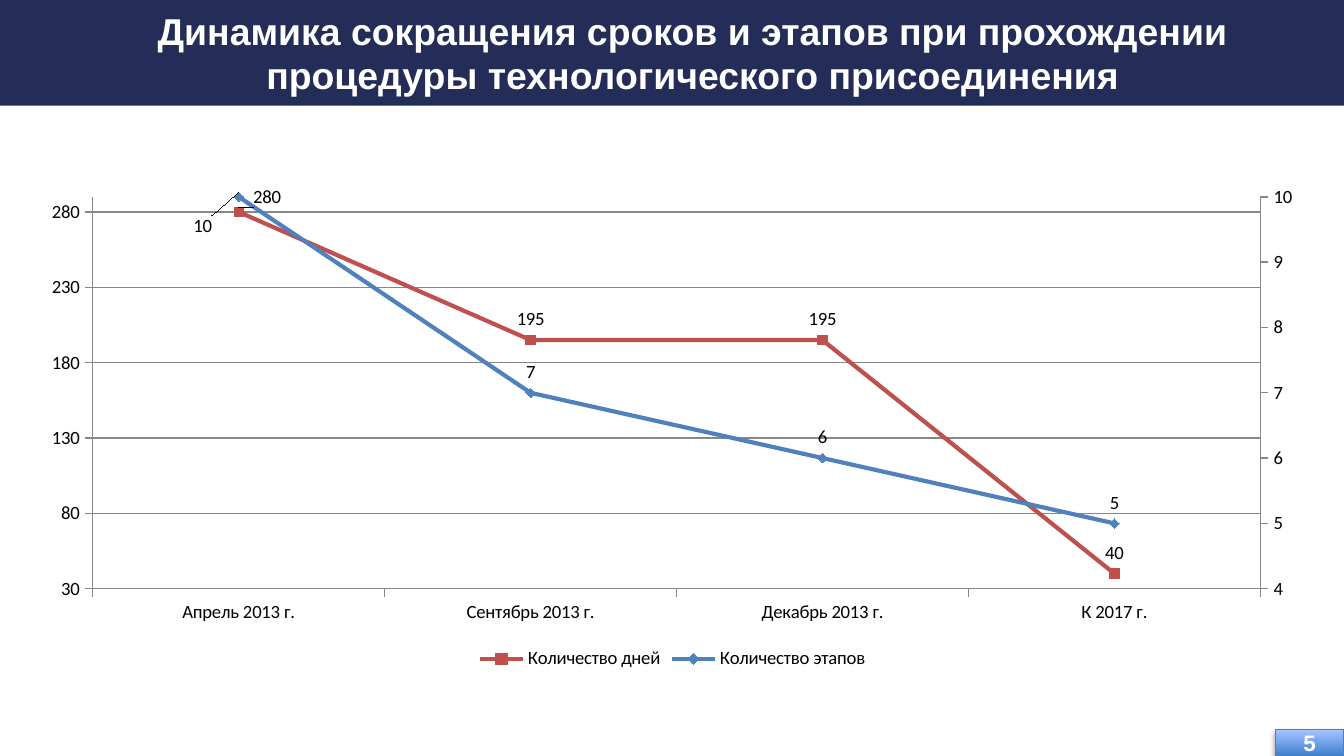
from copy import deepcopy

from lxml import etree
from pptx import Presentation
from pptx import util as u
from pptx.chart import data as chart_data
from pptx.dml import color
from pptx.enum import chart as ch
from pptx.enum import shapes, text
from pptx.oxml import ns

Pt = u.Pt
NAVY = color.RGBColor(0x23, 0x2D, 0x57)
WHITE = color.RGBColor(0xFF, 0xFF, 0xFF)
BLACK = color.RGBColor(0, 0, 0)
GRAY = color.RGBColor(0x87, 0x87, 0x87)
RED = color.RGBColor(0xC0, 0x50, 0x4D)
BLUE = color.RGBColor(0x4F, 0x81, 0xBD)
BADGE_LOW = color.RGBColor(0x3F, 0x80, 0xCE)
BADGE_HIGH = color.RGBColor(0xA4, 0xC4, 0xFF)
BADGE_LINE = color.RGBColor(0x4B, 0x7E, 0xBC)


def add_xml(parent, tag, **attributes):
    return etree.SubElement(parent, ns.qn(tag), {k: str(v) for k, v in attributes.items()})


def manual_layout(**values):
    layout = etree.Element(ns.qn("c:layout"))
    manual = add_xml(layout, "c:manualLayout")
    for name, value in values.items():
        add_xml(manual, f"c:{name}", val=value)
    return layout


def write_text(frame, content, size=12, font="Arial", bold=True, fill=WHITE, margin=0):
    """Write one centred paragraph into a text frame."""
    frame.word_wrap = True
    frame.vertical_anchor = text.MSO_ANCHOR.MIDDLE
    frame.margin_left = frame.margin_right = Pt(margin)
    frame.margin_top = frame.margin_bottom = 0
    para = frame.paragraphs[0]
    para.alignment = text.PP_ALIGN.CENTER
    span = para.add_run()
    span.text = content
    span.font.size, span.font.name, span.font.bold = Pt(size), font, bold
    span.font.color.rgb = fill


class SlideBuilder:
    def __init__(self, deck):
        self.page = deck.slides.add_slide(deck.slide_layouts[6])
        self.font = "Calibri"
        self.size = Pt(10)

    def rect(self, *place):
        box = self.page.shapes.add_shape(shapes.MSO_SHAPE.RECTANGLE, *map(Pt, place))
        box.shadow.inherit = False
        return box

    def band(self, *place):
        box = self.rect(*place)
        box.fill.solid()
        box.fill.fore_color.rgb = NAVY
        box.line.fill.background()

    def title(self, content, *place):
        box = self.page.shapes.add_textbox(*map(Pt, place))
        write_text(box.text_frame, content, size=20, margin=7.2)

    def badge(self, content, *place):
        box = self.rect(*place)
        box.fill.gradient()
        box.fill.gradient_angle = 90
        for stop, shade, position in zip(box.fill.gradient_stops, (BADGE_LOW, BADGE_HIGH), (0, 1)):
            stop.color.rgb = shade
            stop.position = position
        box.line.color.rgb = BADGE_LINE
        box.line.width = Pt(0.75)
        effects = box._element.spPr.find(ns.qn("a:effectLst"))
        shadow = add_xml(effects, "a:outerShdw", blurRad=int(Pt(3.1)), dist=int(Pt(1.8)),
                         dir=5400000, rotWithShape=0)
        add_xml(add_xml(shadow, "a:srgbClr", val="000000"), "a:alpha", val=35000)
        write_text(box.text_frame, content)

    def line_chart(self, categories, series, *place):
        source = chart_data.CategoryChartData()
        source.categories = categories
        for name, values, *_ in series:
            source.add_series(name, values)
        frame = self.page.shapes.add_chart(ch.XL_CHART_TYPE.LINE_MARKERS, *map(Pt, place), source)
        chart = frame.chart
        chart.has_title = False
        chart.font.size, chart.font.name = self.size, self.font
        chart.font.color.rgb = BLACK
        chart.has_legend = True
        chart.legend.position = ch.XL_LEGEND_POSITION.BOTTOM
        chart.legend.include_in_layout = False
        chart.plots[0].vary_by_categories = False
        for line, (_, _, shade, marker, shift) in zip(chart.plots[0].series, series):
            self.style_series(line, shade, marker, shift)
        self.style_axis(chart.category_axis)
        chart.category_axis.tick_label_position = ch.XL_TICK_LABEL_POSITION.LOW
        self.style_axis(chart.value_axis, 30, 290, 50)
        chart.value_axis.has_major_gridlines = True
        grid = chart.value_axis.major_gridlines.format.line
        grid.color.rgb, grid.width = GRAY, Pt(0.75)
        self.split_axes(chart)

    def style_axis(self, axis, low=None, high=None, step=None):
        axis.major_tick_mark = ch.XL_TICK_MARK.OUTSIDE
        axis.minor_tick_mark = ch.XL_TICK_MARK.NONE
        axis.has_major_gridlines = False
        axis.format.line.color.rgb = GRAY
        axis.format.line.width = Pt(0.75)
        if step:
            axis.minimum_scale, axis.maximum_scale, axis.major_unit = low, high, step

    def style_series(self, line, shade, marker, shift):
        line.smooth = False
        line.format.line.color.rgb = shade
        line.format.line.width = Pt(2.25)
        line.marker.style, line.marker.size = marker, 5
        line.marker.format.fill.solid()
        line.marker.format.fill.fore_color.rgb = shade
        line.marker.format.line.color.rgb = shade
        labels = line.data_labels
        labels.show_value = True
        labels.position = ch.XL_LABEL_POSITION.ABOVE
        # The first labels are moved apart
        first = line.points[0].data_label
        first.position = ch.XL_LABEL_POSITION.ABOVE
        first.font.size, first.font.name = self.size, self.font
        first.font.color.rgb = BLACK
        index = labels._element.find(ns.qn("c:dLbl")).find(ns.qn("c:idx"))
        index.addnext(manual_layout(x=shift[0], y=shift[1]))

    def split_axes(self, chart):
        """Move the second series to its own axis on the right."""
        area = chart._chartSpace.chart.plotArea
        left = area.find(ns.qn("c:lineChart"))
        right = deepcopy(left)
        left.remove(left.findall(ns.qn("c:ser"))[1])
        right.remove(right.findall(ns.qn("c:ser"))[0])
        left.addnext(right)
        category, value = area.find(ns.qn("c:catAx")), area.find(ns.qn("c:valAx"))
        right_value, right_category = deepcopy(value), deepcopy(category)
        value.addnext(right_value)
        right_value.addnext(right_category)

        def put(parent, tag, val):
            parent.find(ns.qn(tag)).set("val", val)

        for item, val in zip(right.findall(ns.qn("c:axId")), ("501", "502")):
            item.set("val", val)
        for axis, own, other in ((right_category, "501", "502"), (right_value, "502", "501")):
            put(axis, "c:axId", own)
            put(axis, "c:crossAx", other)
        put(right_category, "c:delete", "1")
        put(right_value, "c:axPos", "r")
        put(right_value, "c:crosses", "max")
        put(right_value, "c:majorUnit", "1")
        scaling = right_value.find(ns.qn("c:scaling"))
        put(scaling, "c:min", "4")
        put(scaling, "c:max", "10")
        right_value.remove(right_value.find(ns.qn("c:majorGridlines")))

        for layout in area.findall(ns.qn("c:layout")):
            area.remove(layout)
        area.insert(0, manual_layout(layoutTarget="inner", xMode="edge", yMode="edge",
                                     x=0.051, y=0.042, w=0.904, h=0.786))


def main():
    deck = Presentation()
    deck.slide_width, deck.slide_height = Pt(720), Pt(405)
    slide = SlideBuilder(deck)

    # Heading
    slide.band(0, 0, 720, 56.7)
    slide.title("Динамика сокращения сроков и этапов при прохождении "
                "процедуры технологического присоединения", 76.3, 0, 589.7, 56.2)

    # Days on the left axis, stages on the right axis
    slide.line_chart(
        ["Апрель 2013 г.", "Сентябрь 2013 г.", "Декабрь 2013 г.", "К 2017 г."],
        [("Количество дней", (280, 195, 195, 40), RED, ch.XL_MARKER_STYLE.SQUARE, (0.022, 0.012)),
         ("Количество этапов", (10, 7, 6, 5), BLUE, ch.XL_MARKER_STYLE.DIAMOND, (-0.028, 0.1))],
        14.4, 94.3, 692, 267.1)

    # Page number
    slide.badge("5", 683.2, 391, 36.8, 14)
    deck.save("out.pptx")


if __name__ == "__main__":
    main()
